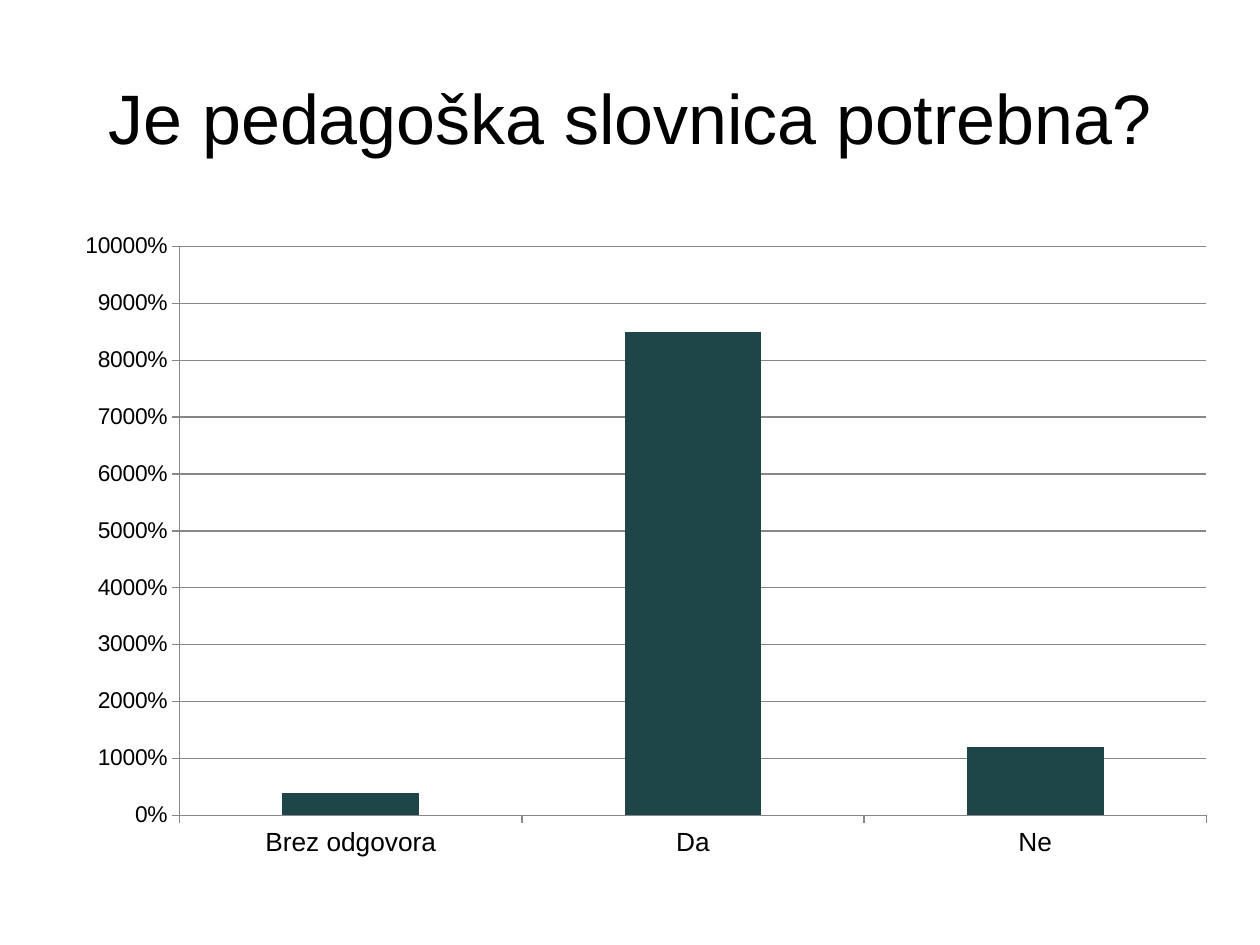
from lxml.etree import SubElement
from pptx import Presentation
from pptx.chart.data import CategoryChartData
from pptx.dml.color import RGBColor
from pptx.enum.chart import XL_CHART_TYPE, XL_TICK_MARK
from pptx.enum.text import MSO_ANCHOR, PP_ALIGN
from pptx.oxml.ns import qn
from pptx.util import Cm, Pt

# Content
TITLE = "Je pedagoška slovnica potrebna?"
ANSWERS = {"Brez odgovora": 4, "Da": 85, "Ne": 12}
FONT, BLACK, GRAY, TEAL = "Arial", "000000", "878787", "1E4649"
PLOT_AREA = {"x": 0.1, "y": 0.04, "w": 0.88, "h": 0.88}


def rgb(color):
    return RGBColor.from_string(color)


def style_font(font, size):
    font.name = FONT
    font.size = Pt(size)
    font.color.rgb = rgb(BLACK)


def style_axis(axis, size):
    style_font(axis.tick_labels.font, size)
    axis.major_tick_mark = XL_TICK_MARK.OUTSIDE
    axis.minor_tick_mark = XL_TICK_MARK.NONE
    style_line(axis.format.line)


def style_line(line):
    line.color.rgb = rgb(GRAY)
    line.width = Pt(0.75)


def place_plot_area(chart):
    plot_area = chart.plots[0]._element.getparent()
    layout = plot_area.find(qn("c:layout"))
    if layout is None:
        layout = SubElement(plot_area, qn("c:layout"))
        plot_area.insert(0, layout)
    manual = SubElement(layout, qn("c:manualLayout"))
    settings = {"layoutTarget": "inner", "xMode": "edge", "yMode": "edge", **PLOT_AREA}
    for name, value in settings.items():
        SubElement(manual, qn(f"c:{name}")).set("val", str(value))


prs = Presentation()
prs.slide_width, prs.slide_height = Cm(25.4), Cm(19.05)
s = prs.slides.add_slide(prs.slide_layouts[6])

# Title
tf = s.shapes.add_textbox(Cm(1.27), Cm(0.76), Cm(22.86), Cm(3.18)).text_frame
tf.word_wrap = True
tf.vertical_anchor = MSO_ANCHOR.MIDDLE
tf.text = TITLE
p = tf.paragraphs[0]
p.alignment = PP_ALIGN.CENTER
style_font(p.runs[0].font, 40)

# Column chart
data = CategoryChartData(number_format="0")
data.categories = list(ANSWERS)
data.add_series("Series 1", list(ANSWERS.values()))
chart = s.shapes.add_chart(XL_CHART_TYPE.COLUMN_CLUSTERED, Cm(1.27), Cm(4.45),
                           Cm(23.52), Cm(13.03), data).chart
chart.has_title = False
chart.has_legend = False
style_font(chart.font, 10)
plot = chart.plots[0]
plot.vary_by_categories = False
plot.gap_width = 150
fill = plot.series[0].format.fill
fill.solid()
fill.fore_color.rgb = rgb(TEAL)

# Axes
style_axis(chart.category_axis, 15)
value_axis = chart.value_axis
style_axis(value_axis, 13)
value_axis.minimum_scale, value_axis.maximum_scale = 0, 100
value_axis.major_unit = 10
value_axis.tick_labels.number_format = "0%"
value_axis.tick_labels.number_format_is_linked = False
value_axis.has_major_gridlines = True
style_line(value_axis.major_gridlines.format.line)
place_plot_area(chart)

prs.save("out.pptx")
